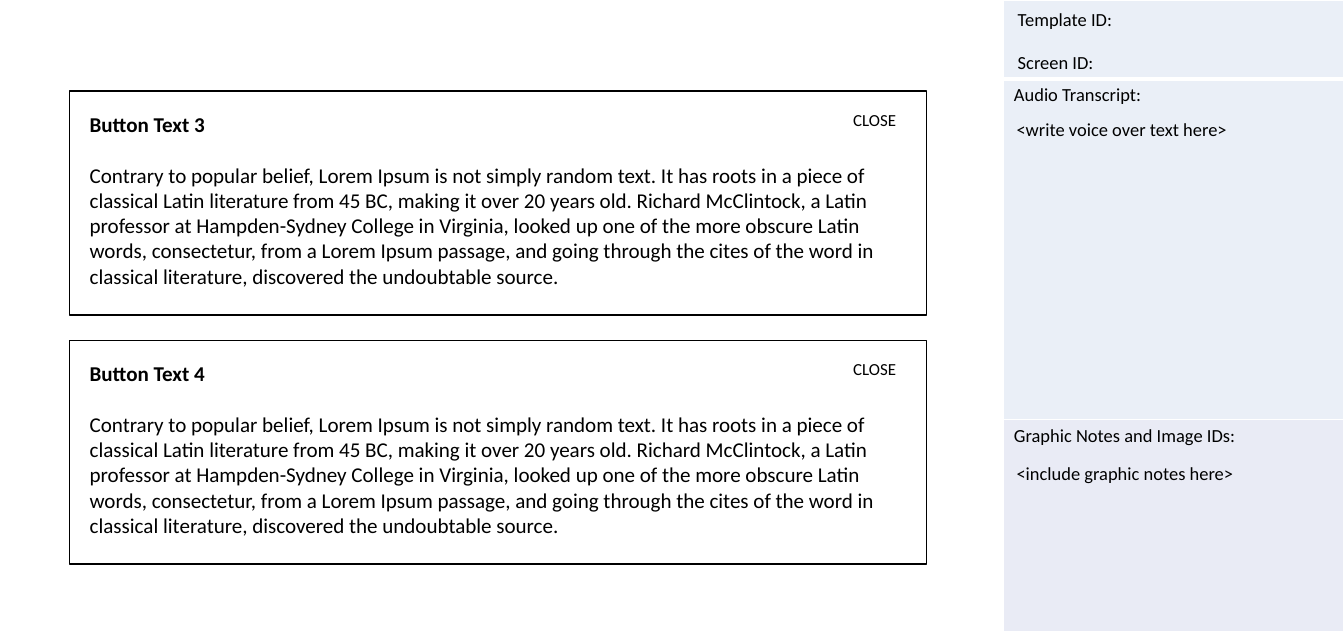
"""Build a storyboard slide with two pop-up cards and a notes sidebar."""
from lxml.etree import SubElement
from pptx import Presentation
from pptx.dml.color import RGBColor
from pptx.enum.text import MSO_ANCHOR as Anchor, PP_ALIGN as Align
from pptx.oxml.ns import qn
from pptx.util import Pt

BLACK = RGBColor(0x00, 0x00, 0x00)
WHITE = RGBColor(0xFF, 0xFF, 0xFF)
PALE_BLUE = RGBColor(0xEA, 0xEF, 0xF7)
PALE_LILAC = RGBColor(0xE9, 0xEB, 0xF5)
FONT = "Calibri"

LOREM = (
    "Contrary to popular belief, Lorem Ipsum is not simply random text. "
    "It has roots in a piece of classical Latin literature from 45 BC, "
    "making it over 20 years old. Richard McClintock, a Latin professor at "
    "Hampden-Sydney College in Virginia, looked up one of the more obscure "
    "Latin words, consectetur, from a Lorem Ipsum passage, and going through "
    "the cites of the word in classical literature, discovered the "
    "undoubtable source."
)
CARDS = [("Button Text 3", LOREM), ("Button Text 4", LOREM)]
CLOSE = "CLOSE"

# text, row height, fill, top border, bottom border
SIDEBAR = [
    ("", 59.8, PALE_BLUE, 1, 3),
    ("Audio Transcript:", 258.7, PALE_BLUE, 3, 1),
    ("Graphic Notes and Image IDs:", 160.7, PALE_LILAC, 1, 1),
]
# text, left, top, width
SIDEBAR_NOTES = [
    ("Screen ID:", 765.5, 34.8, 275),
    ("Template ID:", 765.5, 2.9, 275),
    ("<write voice over text here>", 764.6, 86, 256),
    ("<include graphic notes here>", 764.6, 347.3, 256),
]

SLIDE_W, SLIDE_H = 1020.24, 481.68
SIDEBAR_LEFT, SIDEBAR_W = 761.8, 258.4
CARD_LEFT, CARD_TOP, CARD_W, CARD_H = 53, 69.1, 650.2, 169.9
CARD_STEP, CARD_INSET = 189, 15.1
CLOSE_W, CLOSE_DROP = 62.6, 10.4


def style(paragraph, size, bold=False):
    paragraph.alignment = Align.LEFT
    font = paragraph.font
    font.name, font.size, font.bold = FONT, Pt(size), bold
    font.color.rgb = BLACK


def add_label(slide, text, left, top, width, size):
    box = slide.shapes.add_textbox(Pt(left), Pt(top), Pt(width), Pt(size * 1.22 + 7.2))
    box.text_frame.word_wrap = True
    label = box.text_frame.paragraphs[0]
    label.text = text
    style(label, size)


def add_border(cell, side, width):
    line = SubElement(cell._tc.get_or_add_tcPr(), qn(f"a:{side}"), w=str(Pt(width)))
    fill = SubElement(line, qn("a:solidFill"))
    SubElement(fill, qn("a:srgbClr"), val=str(WHITE))


def add_sidebar(slide):
    height = sum(row[1] for row in SIDEBAR)
    sidebar = slide.shapes.add_table(
        len(SIDEBAR), 1, Pt(SIDEBAR_LEFT), Pt(0), Pt(SIDEBAR_W), Pt(height)
    ).table
    sidebar.first_row = sidebar.horz_banding = False
    for index, (heading, row_h, color, above, below) in enumerate(SIDEBAR):
        sidebar.rows[index].height = Pt(row_h)
        cell = sidebar.cell(index, 0)
        cell.margin_left = cell.margin_right = Pt(7.9)
        cell.text = heading
        style(cell.text_frame.paragraphs[0], 14)
        for side, width in (("lnL", 1), ("lnR", 1), ("lnT", above), ("lnB", below)):
            add_border(cell, side, width)
        cell.fill.solid()
        cell.fill.fore_color.rgb = color
    for note in SIDEBAR_NOTES:
        add_label(slide, *note, 14)


def add_card(slide, top, title, body):
    card = slide.shapes.add_shape(1, Pt(CARD_LEFT), Pt(top), Pt(CARD_W), Pt(CARD_H))
    card.shadow.inherit = False
    card.fill.solid()
    card.fill.fore_color.rgb = WHITE
    card.line.color.rgb = BLACK
    card.line.width = Pt(1)
    frame = card.text_frame
    frame.word_wrap = True
    frame.vertical_anchor = Anchor.TOP
    frame.margin_left = frame.margin_right = Pt(CARD_INSET)
    frame.margin_top = frame.margin_bottom = Pt(CARD_INSET)
    heading = frame.paragraphs[0]
    heading.text = title
    heading.space_after = Pt(19.5)
    style(heading, 16, bold=True)
    passage = frame.add_paragraph()
    passage.text = body
    style(passage, 16)
    add_label(slide, CLOSE, CARD_LEFT + CARD_W - CLOSE_W, top + CLOSE_DROP, CLOSE_W, 12.8)


def main():
    deck = Presentation()
    deck.slide_width, deck.slide_height = Pt(SLIDE_W), Pt(SLIDE_H)
    slide = deck.slides.add_slide(deck.slide_layouts[6])
    add_sidebar(slide)
    for index, (title, body) in enumerate(CARDS):
        add_card(slide, CARD_TOP + index * CARD_STEP, title, body)
    deck.save("out.pptx")


if __name__ == "__main__":
    main()
